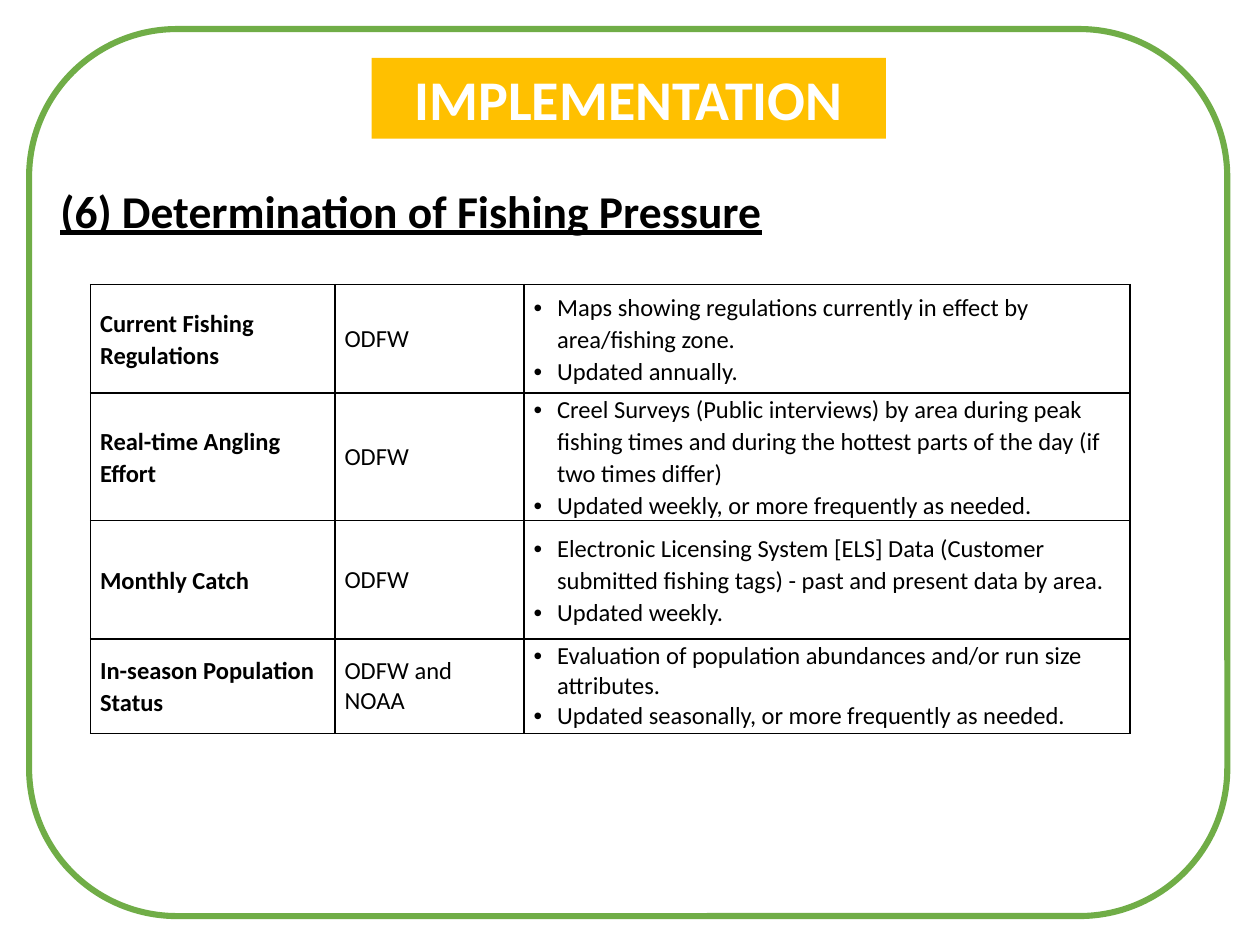
from lxml import etree
from pptx import Presentation
from pptx.dml.color import RGBColor
from pptx.enum import shapes, text
from pptx.oxml import ns
from pptx.util import Pt

WHITE = RGBColor(0xFF, 0xFF, 0xFF)
BLACK = RGBColor(0, 0, 0)
GREEN = RGBColor(0x70, 0xAD, 0x47)
GOLD = RGBColor(0xFF, 0xC0, 0x00)

COLS = [139.7, 108, 346.3]
HEIGHTS = [61.9, 71.6, 67.5, 54]
ROWS = [
    ("Current Fishing Regulations", "ODFW",
     ["Maps showing regulations currently in effect by area/fishing zone.",
      "Updated annually."]),
    ("Real-time Angling Effort", "ODFW",
     ["Creel Surveys (Public interviews) by area during peak fishing times "
      "and during the hottest parts of the day (if two times differ)",
      "Updated weekly, or more frequently as needed."]),
    ("Monthly Catch", "ODFW",
     ["Electronic Licensing System [ELS] Data (Customer submitted fishing "
      "tags) - past and present data by area.",
      "Updated weekly."]),
    ("In-season Population Status", "ODFW and NOAA",
     ["Evaluation of population abundances and/or run size attributes.",
      "Updated seasonally, or more frequently as needed."]),
]


def node(parent, tag, **attrs):
    return etree.SubElement(parent, ns.qn(tag), attrs)


class Page:
    face = "Calibri"
    size = 14

    def __init__(self, slide):
        self.slide = slide

    def add_run(self, para, words, size=None, color=BLACK, bold=False, under=False):
        run = para.add_run()
        run.text = words
        font = run.font
        font.name, font.size = self.face, Pt(size or self.size)
        font.bold, font.underline = bold, under
        font.color.rgb = color

    def shape(self, kind, box, fill, line=None, width=0):
        item = self.slide.shapes.add_shape(kind, *map(Pt, box))
        item.shadow.inherit = False
        item.fill.solid()
        item.fill.fore_color.rgb = fill
        if line is None:
            item.line.fill.background()
        else:
            item.line.color.rgb = line
            item.line.width = Pt(width)
        return item

    def frame(self, box):
        item = self.shape(shapes.MSO_SHAPE.ROUNDED_RECTANGLE, box, WHITE, GREEN, 3.5)
        color = item.element.spPr.find(ns.qn("a:solidFill")).find(ns.qn("a:srgbClr"))
        node(color, "a:alpha", val="75000")

    def banner(self, box, words):
        item = self.shape(shapes.MSO_SHAPE.RECTANGLE, box, GOLD)
        para = item.text_frame.paragraphs[0]
        para.alignment = text.PP_ALIGN.CENTER
        self.add_run(para, words, 32, WHITE, bold=True)

    def heading(self, box, words):
        area = self.slide.shapes.add_textbox(*map(Pt, box)).text_frame
        area.word_wrap = True
        self.add_run(area.paragraphs[0], words, 26, bold=True, under=True)

    def bullet(self, para):
        props = para._p.get_or_add_pPr()
        props.set("marL", str(Pt(13.5)))
        props.set("indent", str(Pt(-13.5)))
        node(props, "a:buFont", typeface="Arial")
        node(props, "a:buChar", char="•")

    def cell(self, cell, lines, bold=False, bullets=False, loose=False):
        cell.margin_left = cell.margin_right = Pt(5.4)
        cell.margin_top = cell.margin_bottom = 0
        cell.vertical_anchor = text.MSO_ANCHOR.MIDDLE
        props = cell._tc.get_or_add_tcPr()
        for side in "LRTB":
            edge = node(props, "a:ln" + side, w=str(Pt(1)))
            node(node(edge, "a:solidFill"), "a:srgbClr", val=str(BLACK))
        cell.fill.background()
        area = cell.text_frame
        for i, words in enumerate(lines):
            para = area.add_paragraph() if i else area.paragraphs[0]
            if bullets:
                self.bullet(para)
            if loose:
                para.line_spacing = 1.07
                para.space_after = Pt(8 if i == len(lines) - 1 else 0)
            self.add_run(para, words, bold=bold)

    def table(self, left, top, cols, heights, rows):
        grid = self.slide.shapes.add_table(
            len(rows), len(cols), Pt(left), Pt(top),
            Pt(sum(cols)), Pt(sum(heights))).table
        grid.first_row = grid.horz_banding = False
        for col, width in zip(grid.columns, cols):
            col.width = Pt(width)
        for r, (topic, source, notes) in enumerate(rows):
            grid.rows[r].height = Pt(heights[r])
            self.cell(grid.cell(r, 0), [topic], bold=True, loose=True)
            self.cell(grid.cell(r, 1), [source])
            # The last row is set tight
            self.cell(grid.cell(r, 2), notes, bullets=True,
                      loose=r < len(rows) - 1)


def main():
    deck = Presentation()
    deck.slide_width, deck.slide_height = Pt(720), Pt(540)
    page = Page(deck.slides.add_slide(deck.slide_layouts[6]))

    # Border and title
    page.frame((16.6, 16.6, 684.7, 506.9))
    page.banner((212.4, 33.1, 293.8, 46.1), "IMPLEMENTATION")

    # Data sources
    page.table(51.8, 162.7, COLS, HEIGHTS, ROWS)
    page.heading((27.4, 100.8, 663.8, 38.9), "(6) Determination of Fishing Pressure")

    deck.save("out.pptx")


if __name__ == "__main__":
    main()
